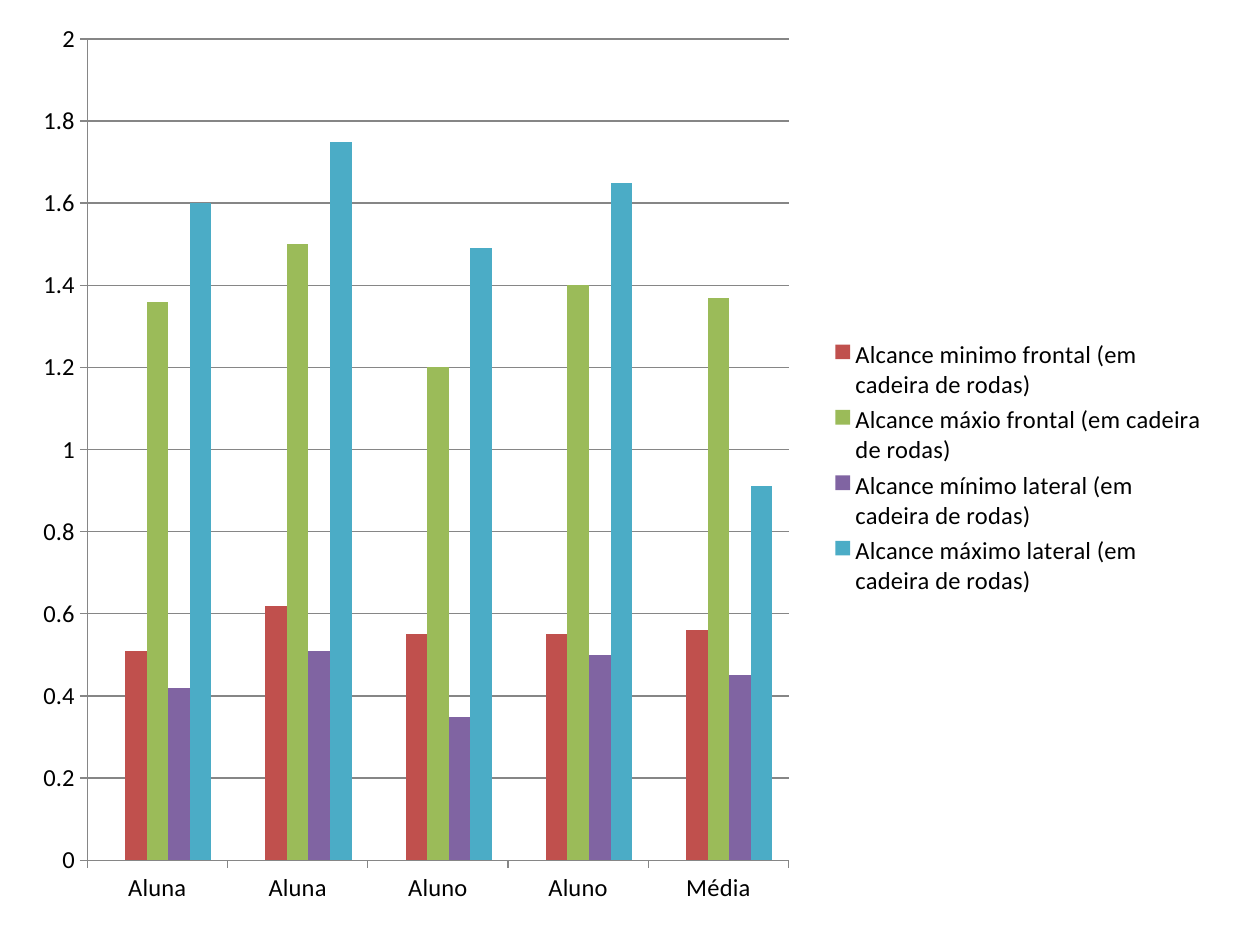
from typing import NamedTuple, Optional

from lxml import etree
from pptx import Presentation
from pptx.chart.data import CategoryChartData
from pptx.dml.color import RGBColor
from pptx.enum.chart import XL_CHART_TYPE, XL_LEGEND_POSITION, XL_TICK_MARK
from pptx.oxml.ns import qn
from pptx.util import Pt

CLUSTERED = XL_CHART_TYPE.COLUMN_CLUSTERED
LEGEND_RIGHT = XL_LEGEND_POSITION.RIGHT
TICK_OUTSIDE = XL_TICK_MARK.OUTSIDE
TICK_NONE = XL_TICK_MARK.NONE

COLORS = {
    "text": "000000",
    "axis": "868686",
    "spacer": "4F81BD",
    "front_min": "C0504D",
    "front_max": "9BBB59",
    "side_min": "8064A2",
    "side_max": "4BACC6",
}


class Reach(NamedTuple):
    label: str
    color: str
    metres: tuple[Optional[float], ...]


PEOPLE = ("Aluna", "Aluna", "Aluno", "Aluno", "Média")
REACHES = (
    Reach("Series 1", "spacer", (None,) * len(PEOPLE)),
    Reach("Alcance minimo frontal (em cadeira de rodas)", "front_min",
          (0.51, 0.62, 0.55, 0.55, 0.56)),
    Reach("Alcance máxio frontal (em cadeira de rodas)", "front_max",
          (1.36, 1.5, 1.2, 1.4, 1.37)),
    Reach("Alcance mínimo lateral (em cadeira de rodas)", "side_min",
          (0.42, 0.51, 0.35, 0.5, 0.45)),
    Reach("Alcance máximo lateral (em cadeira de rodas)", "side_max",
          (1.6, 1.75, 1.49, 1.65, 0.91)),
)
PLOT_LAYOUT = {
    "layoutTarget": "inner", "xMode": "edge", "yMode": "edge",
    "x": 0.049, "y": 0.021, "w": 0.589, "h": 0.917,
}


def rgb(name: str) -> RGBColor:
    return RGBColor.from_string(COLORS[name])


def apply(target, **values) -> None:
    for attribute, value in values.items():
        setattr(target, attribute, value)


def place_plot(chart) -> None:
    """Fix the inner plot area as fractions of the chart."""
    plot_area = chart._chartSpace.chart.plotArea
    layout = plot_area.find(qn("c:layout"))
    if layout is None:
        layout = etree.Element(qn("c:layout"))
        plot_area.insert(0, layout)
    manual = etree.SubElement(layout, qn("c:manualLayout"))
    for tag, value in PLOT_LAYOUT.items():
        etree.SubElement(manual, qn(f"c:{tag}")).set("val", str(value))


def hide_legend_entry(legend, index: int) -> None:
    entry = etree.Element(qn("c:legendEntry"))
    for tag, value in (("idx", index), ("delete", 1)):
        etree.SubElement(entry, qn(f"c:{tag}")).set("val", str(value))
    legend._element.find(qn("c:legendPos")).addnext(entry)


def style_line(line) -> None:
    line.color.rgb = rgb("axis")
    line.width = Pt(0.75)


def add_reach_chart(slide) -> None:
    chart_data = CategoryChartData()
    chart_data.categories = PEOPLE
    for reach in REACHES:
        chart_data.add_series(reach.label, reach.metres)
    chart = slide.shapes.add_chart(
        CLUSTERED, Pt(16.56), Pt(11.52), Pt(680.4), Pt(511.92), chart_data
    ).chart

    apply(chart, has_title=False, has_legend=True)
    apply(chart.font, name="Calibri", size=Pt(14))
    chart.font.color.rgb = rgb("text")
    place_plot(chart)

    apply(chart.legend, position=LEGEND_RIGHT, include_in_layout=False)
    hide_legend_entry(chart.legend, 0)

    plot = chart.plots[0]
    apply(plot, gap_width=150, overlap=0, vary_by_categories=False)
    for series, reach in zip(plot.series, REACHES):
        series.format.fill.solid()
        series.format.fill.fore_color.rgb = rgb(reach.color)

    for axis in (chart.category_axis, chart.value_axis):
        apply(axis, major_tick_mark=TICK_OUTSIDE, minor_tick_mark=TICK_NONE)
        style_line(axis.format.line)
    apply(chart.value_axis, minimum_scale=0, maximum_scale=2, major_unit=0.2,
          has_major_gridlines=True)
    style_line(chart.value_axis.major_gridlines.format.line)


def main() -> None:
    deck = Presentation()
    apply(deck, slide_width=Pt(720), slide_height=Pt(540))
    add_reach_chart(deck.slides.add_slide(deck.slide_layouts[6]))
    deck.save("out.pptx")


if __name__ == "__main__":
    main()
